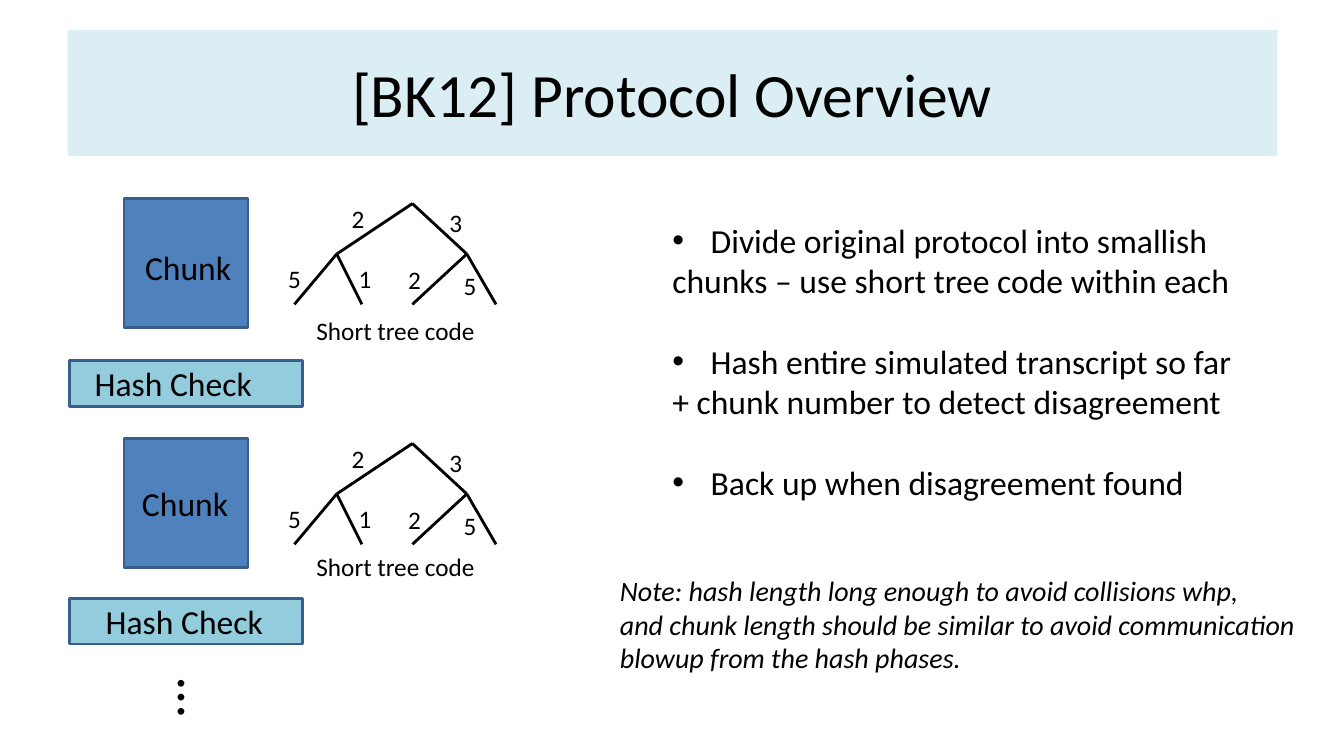
import pptx
import pptx.util
import pptx.dml.color
import pptx.enum.shapes
import pptx.enum.text
import pptx.oxml.ns
from dataclasses import dataclass
from lxml import etree

EMU_PER_PX = 9144


@dataclass(frozen=True)
class Theme:
    font: str = "Calibri"
    ink: str = "000000"
    banner: str = "DBEEF4"
    chunk: str = "4F81BD"
    hash_check: str = "93CDDD"
    outline: str = "3A5F8C"
    title_size: int = 44
    dots_size: int = 40
    body_size: int = 24
    note_size: int = 20
    label_size: int = 18
    line_width: int = 2
    point_gap: int = 29


THEME = Theme()

TREE_NODES = {
    "root": (409, 5), "left": (334, 55), "right": (463, 55),
    "leaf1": (292, 105), "leaf2": (359, 105),
    "leaf3": (409, 105), "leaf4": (492, 105),
}
TREE_EDGES = [
    ("root", "left", "2", (339, 0)),
    ("root", "right", "3", (436, 4)),
    ("left", "leaf1", "5", (276, 59)),
    ("left", "leaf2", "1", (346, 59)),
    ("right", "leaf3", "2", (395, 60)),
    ("right", "leaf4", "5", (450, 66)),
]
ROUNDS = [
    {"top": 197, "chunk_label": (134, 240), "caption_top": 308,
     "hash_top": 358, "hash_label_left": 84},
    {"top": 435, "chunk_label": (131, 474), "caption_top": 542,
     "hash_top": 594, "hash_label_left": 95},
]
POINTS = [
    ("Divide original protocol into smallish",
     "chunks – use short tree code within each"),
    ("Hash entire simulated transcript so far",
     "+ chunk number to detect disagreement"),
    ("Back up when disagreement found",),
]
NOTE = [
    "Note: hash length long enough to avoid collisions whp,",
    "and chunk length should be similar to avoid communication",
    "blowup from the hash phases.",
]


def px(length):
    return pptx.util.Emu(length * EMU_PER_PX)


def rgb(colour):
    return pptx.dml.color.RGBColor.from_string(colour)


def style(paragraph, size, italic=False):
    font = paragraph.font
    font.name = THEME.font
    font.size = pptx.util.Pt(size)
    font.color.rgb = rgb(THEME.ink)
    font.italic = italic


def add_box(slide, left, top, width, height, fill, outline=None):
    box = slide.shapes.add_shape(
        pptx.enum.shapes.MSO_SHAPE.RECTANGLE,
        px(left), px(top), px(width), px(height))
    box.shadow.inherit = False
    box.fill.solid()
    box.fill.fore_color.rgb = rgb(fill)
    if outline:
        box.line.color.rgb = rgb(outline)
        box.line.width = pptx.util.Pt(THEME.line_width)
    else:
        box.line.fill.background()
    return box


def add_text(slide, left, top, width, height, lines, size, italic=False):
    box = slide.shapes.add_textbox(px(left), px(top), px(width), px(height))
    frame = box.text_frame
    frame.word_wrap = False
    frame.text = "\n".join(lines)
    for paragraph in frame.paragraphs:
        style(paragraph, size, italic)
    return box


def add_edge(slide, start, end):
    edge = slide.shapes.add_connector(
        pptx.enum.shapes.MSO_CONNECTOR.STRAIGHT,
        *(px(length) for length in start + end))
    edge.line.color.rgb = rgb(THEME.ink)
    edge.line.width = pptx.util.Pt(THEME.line_width)
    etree.SubElement(edge.line._get_or_add_ln().getparent(),
                     pptx.oxml.ns.qn("a:effectLst"))


def add_bullet(paragraph):
    properties = paragraph._p.get_or_add_pPr()
    properties.set("marL", str(px(38)))
    properties.set("indent", str(px(-38)))
    font = etree.SubElement(properties, pptx.oxml.ns.qn("a:buFont"))
    font.set("typeface", "Arial")
    bullet = etree.SubElement(properties, pptx.oxml.ns.qn("a:buChar"))
    bullet.set("char", "•")


def add_title(slide, text):
    banner = add_box(slide, 67, 30, 1200, 125, THEME.banner)
    frame = banner.text_frame
    frame.text = text
    frame.vertical_anchor = pptx.enum.text.MSO_ANCHOR.MIDDLE
    title = frame.paragraphs[0]
    title.alignment = pptx.enum.text.PP_ALIGN.CENTER
    style(title, THEME.title_size)


def add_tree(slide, top):
    nodes = {name: (x, top + y) for name, (x, y) in TREE_NODES.items()}
    for parent, child, label, (x, y) in TREE_EDGES:
        add_edge(slide, nodes[parent], nodes[child])
        add_text(slide, x, top + y, 33, 40, [label], THEME.label_size)


def add_round(slide, top, chunk_label, caption_top, hash_top, hash_label_left):
    add_box(slide, 123, top, 123, 128, THEME.chunk, THEME.outline)
    add_text(slide, *chunk_label, 106, 50, ["Chunk"], THEME.body_size)
    add_tree(slide, top)
    add_text(slide, 304, caption_top, 179, 40, ["Short tree code"],
             THEME.label_size)
    add_box(slide, 69, hash_top, 231, 45, THEME.hash_check, THEME.outline)
    add_text(slide, hash_label_left, hash_top - 3, 178, 50, ["Hash Check"],
             THEME.body_size)


def add_points(slide):
    lines = [line for point in POINTS for line in point]
    body = add_text(slide, 657, 213, 579, 414, lines, THEME.body_size)
    openings = {point[0] for point in POINTS}
    for index, paragraph in enumerate(body.text_frame.paragraphs):
        if paragraph.text in openings:
            if index:
                paragraph.space_before = pptx.util.Pt(THEME.point_gap)
            add_bullet(paragraph)


def main():
    deck = pptx.Presentation()
    deck.slide_width, deck.slide_height = px(1333), px(750)
    slide = deck.slides.add_slide(deck.slide_layouts[6])
    add_title(slide, "[BK12] Protocol Overview")
    for protocol_round in ROUNDS:
        add_round(slide, **protocol_round)
    continuation = add_text(slide, 169, 654, 59, 77, ["…"], THEME.dots_size)
    continuation.rotation = 90
    add_points(slide)
    add_text(slide, 605, 564, 703, 111, NOTE, THEME.note_size, italic=True)
    deck.save("out.pptx")


if __name__ == "__main__":
    main()
